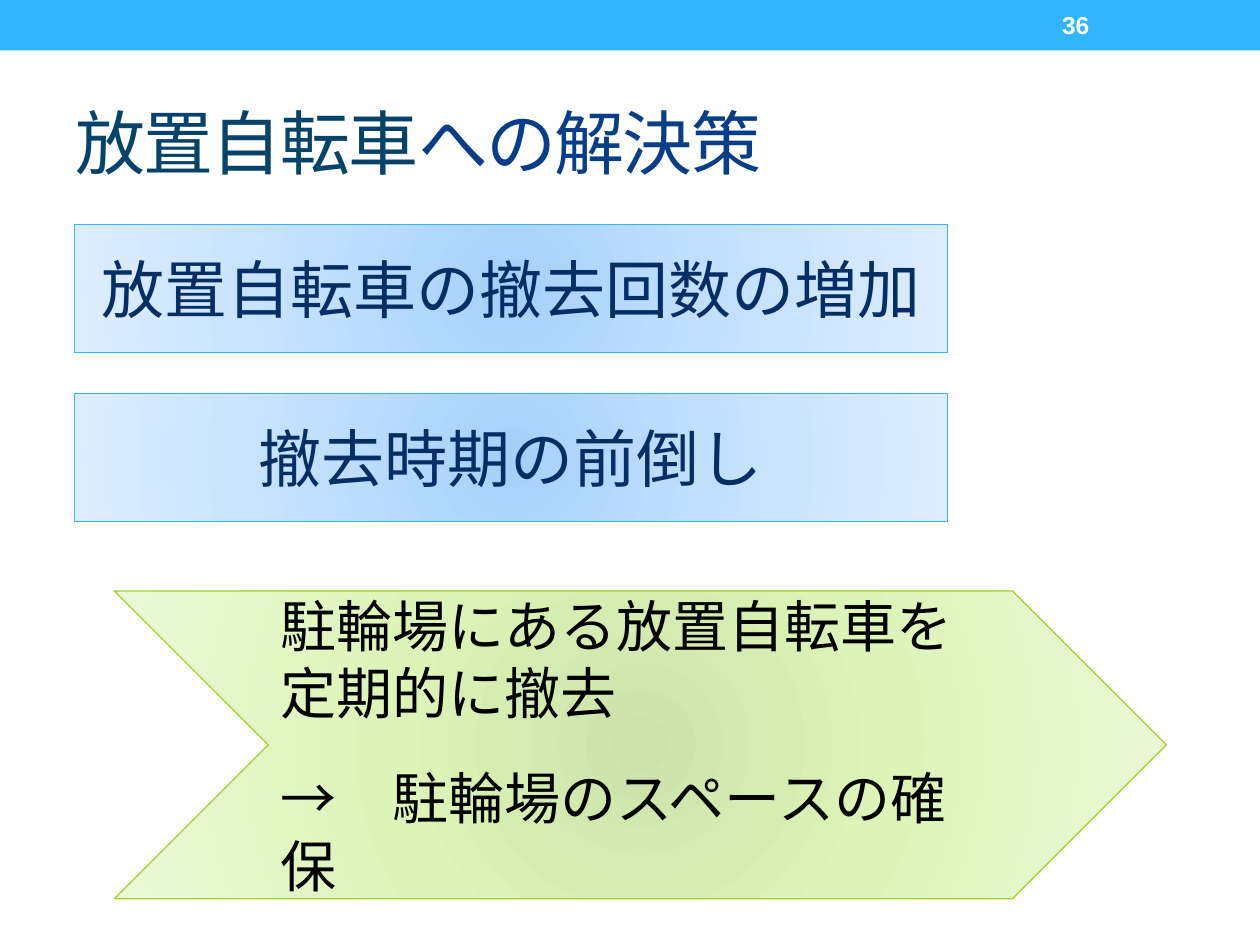
import pptx
import pptx.util
import pptx.dml.color
import pptx.enum.shapes
import pptx.enum.text
import pptx.oxml
import pptx.oxml.ns

Pt = pptx.util.Pt
SHAPE = pptx.enum.shapes.MSO_SHAPE
ALIGN = pptx.enum.text.PP_ALIGN
MIDDLE = pptx.enum.text.MSO_ANCHOR.MIDDLE

COLORS = {
    "banner": "31B6FD", "white": "FFFFFF", "black": "000000",
    "title": "06436B", "title_end": "073E87", "measure": "052E65", "green": "A5D028",
}
BLUE_GRADIENT = [(0, "A6D0FA"), (45, "C1E0FF"), (100, "DDEDFF")]
GREEN_GRADIENT = [(0, "CCE2AA"), (45, "DCF4B7"), (100, "EBF9D7")]

TITLE = [("放置自転車", "title"), ("への解決策", "title_end")]
PAGE_NUMBER = "36"
MEASURES = ["放置自転車の撤去回数の増加", "撤去時期の前倒し"]
RESULT = [("駐輪場にある放置自転車を", 0), ("定期的に撤去", 0), ("→　駐輪場のスペースの確保", 21.7)]

MEASURE_LEFT, MEASURE_TOP, MEASURE_WIDTH, MEASURE_HEIGHT = 42.5, 128.2, 499, 73.4
MEASURE_STEP = 96.5


def rgb(name):
    return pptx.dml.color.RGBColor.from_string(COLORS[name])


def style(paragraph, size, color, align=ALIGN.LEFT):
    paragraph.alignment = align
    paragraph.font.size = Pt(size)
    paragraph.font.name = "Arial"
    paragraph.font.color.rgb = rgb(color)


def add_block(slide, kind, box, gradient, line_color):
    shape = slide.shapes.add_shape(kind, *map(Pt, box))
    shape.shadow.inherit = False
    stops = "".join(
        f'<a:gs pos="{position * 1000}"><a:srgbClr val="{color}"/></a:gs>'
        for position, color in gradient
    )
    fill = pptx.oxml.parse_xml(
        f'<a:gradFill {pptx.oxml.ns.nsdecls("a")} rotWithShape="1"><a:gsLst>{stops}</a:gsLst>'
        '<a:path path="circle"><a:fillToRect l="100000" t="100000" r="100000" b="100000"/>'
        '</a:path></a:gradFill>'
    )
    shape.element.spPr.insert(2, fill)
    shape.line.color.rgb = rgb(line_color)
    shape.line.width = Pt(0.75)
    shape.text_frame.word_wrap = True
    shape.text_frame.vertical_anchor = MIDDLE
    return shape


def main():
    presentation = pptx.Presentation()
    presentation.slide_width, presentation.slide_height = Pt(720), Pt(540)
    slide = presentation.slides.add_slide(presentation.slide_layouts[5])

    banner = slide.shapes.add_shape(SHAPE.RECTANGLE, 0, 0, Pt(720), Pt(28.8))
    banner.shadow.inherit = False
    banner.fill.solid()
    banner.fill.fore_color.rgb = rgb("banner")
    banner.line.fill.background()

    title = slide.shapes.title
    title.left, title.top, title.width, title.height = map(Pt, (36, 41.8, 648, 77.8))
    title.text_frame.vertical_anchor = MIDDLE
    paragraph = title.text_frame.paragraphs[0]
    style(paragraph, 40, "title")
    for text, color in TITLE:
        run = paragraph.add_run()
        run.text = text
        run.font.color.rgb = rgb(color)
        run.font._element.set("spc", "-100")

    number = slide.shapes.add_textbox(*map(Pt, (599.8, 1.4, 84.2, 25.9)))
    number.text_frame.word_wrap = True
    number.text_frame.vertical_anchor = MIDDLE
    paragraph = number.text_frame.paragraphs[0]
    paragraph.text = PAGE_NUMBER
    style(paragraph, 14, "white")
    paragraph.font.bold = True

    for index, text in enumerate(MEASURES):
        box = (MEASURE_LEFT, MEASURE_TOP + index * MEASURE_STEP, MEASURE_WIDTH, MEASURE_HEIGHT)
        measure = add_block(slide, SHAPE.RECTANGLE, box, BLUE_GRADIENT, "banner")
        paragraph = measure.text_frame.paragraphs[0]
        paragraph.text = text
        style(paragraph, 36, "measure", ALIGN.CENTER)

    result = add_block(slide, SHAPE.CHEVRON, (65.3, 337.7, 601.2, 175.9), GREEN_GRADIENT, "green")
    frame = result.text_frame
    frame.text = "\n".join(text for text, gap in RESULT)
    for paragraph, (text, gap) in zip(frame.paragraphs, RESULT):
        style(paragraph, 32, "black")
        paragraph.space_before = Pt(gap)

    presentation.save("out.pptx")


if __name__ == "__main__":
    main()
